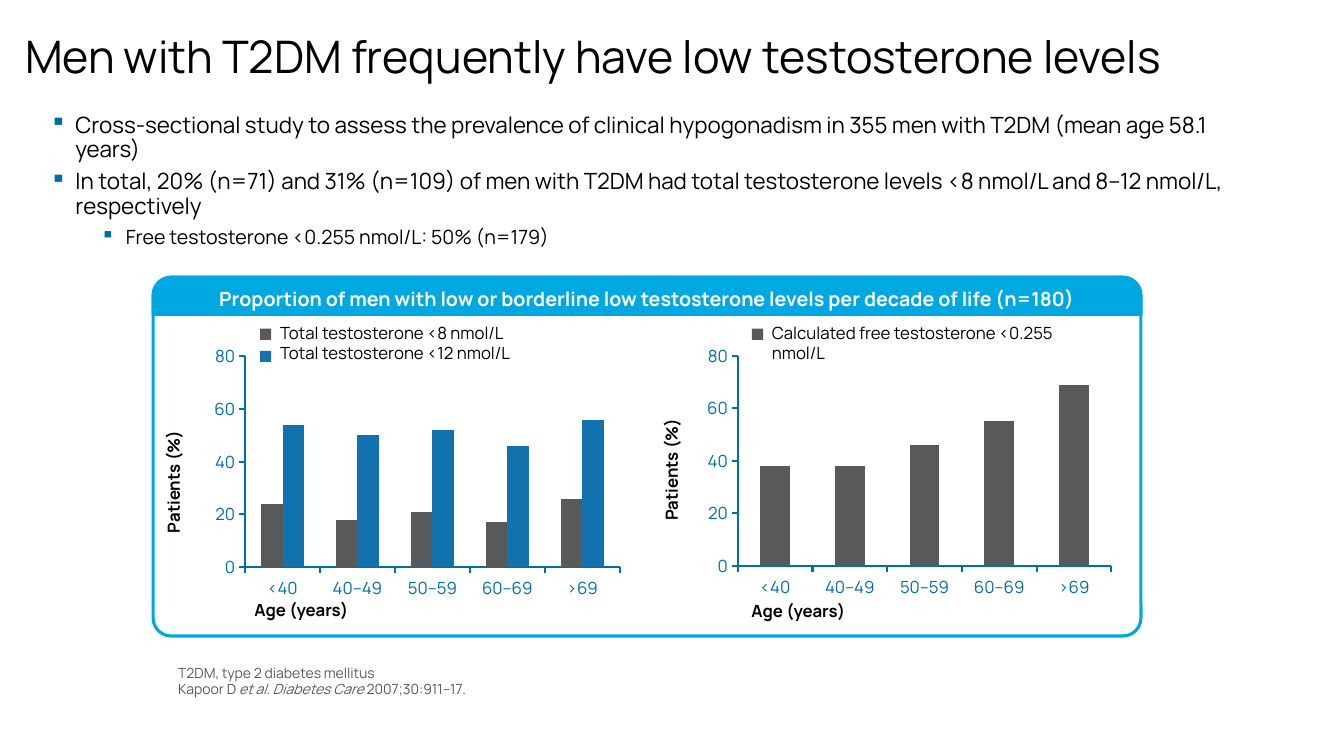
from dataclasses import dataclass

from lxml import etree
from pptx import Presentation
from pptx.chart.data import CategoryChartData as Data
from pptx.dml.color import RGBColor
from pptx.enum.chart import XL_CHART_TYPE as Kind, XL_TICK_MARK as Tick
from pptx.enum.shapes import MSO_SHAPE as Geo
from pptx.enum.text import MSO_ANCHOR as Anchor, PP_ALIGN as Align
from pptx.oxml.ns import qn
from pptx.util import Pt

FONT = "Manrope"
BLACK, WHITE, GREY = "000000", "FFFFFF", "58595B"
BLUE, NAVY, CYAN = "1272AE", "006EAB", "00A8E1"
AGES = ["<40", "40–49", "50–59", "60–69", ">69"]

Box = tuple[float, float, float, float]


@dataclass
class Run:
    text: str
    italic: bool = False
    color: str = ""


@dataclass
class Line:
    runs: list[Run]
    size: float = 0
    left: float = 0
    bullet: bool = False
    before: float = 0


@dataclass
class Bars:
    label: str
    vals: list[int]
    color: str


@dataclass
class Plot:
    box: Box
    area: Box
    bars: list[Bars]
    key: tuple[float, float]
    age: tuple[float, float]
    share: tuple[float, float]


def paint(color: str) -> RGBColor:
    return RGBColor.from_string(color)


def place(box: Box) -> list[Pt]:
    return [Pt(n) for n in box]


def mark(para, left: float) -> None:
    """Give the paragraph a square bullet with a hanging indent."""
    props = para._p.get_or_add_pPr()
    props.set("marL", str(Pt(left)))
    props.set("indent", str(-Pt(18)))
    tint = etree.SubElement(props, qn("a:buClr"))
    etree.SubElement(tint, qn("a:srgbClr"), val=NAVY)
    etree.SubElement(props, qn("a:buChar"), char="▪")


def write(shape, lines: list[Line | str], size: float = 12, color: str = BLACK,
          bold: bool = False, align=Align.LEFT, anchor=Anchor.TOP,
          wrap: bool = True, space: float = 0, turn: bool = False) -> None:
    frame = shape.text_frame
    frame.word_wrap = wrap
    frame.vertical_anchor = anchor
    if turn:
        frame._txBody.bodyPr.set("vert", "vert270")
    for i, item in enumerate(lines):
        line = Line([Run(item)]) if isinstance(item, str) else item
        para = frame.add_paragraph() if i else frame.paragraphs[0]
        if line.bullet:
            mark(para, line.left)
        para.alignment = align
        if space:
            para.line_spacing = space
        if line.before and i:
            para.space_before = Pt(line.before)
        for part in line.runs:
            run = para.add_run()
            run.text = part.text
            font = run.font
            font.name, font.size = FONT, Pt(line.size or size)
            font.bold, font.italic = bold, part.italic
            font.color.rgb = paint(part.color or color)


def label(slide, box: Box, lines: list[Line | str], **style) -> None:
    write(slide.shapes.add_textbox(*place(box)), lines, **style)


def block(slide, geo, box: Box, fill: str = "", edge: str = ""):
    shape = slide.shapes.add_shape(geo, *place(box))
    shape.shadow.inherit = False
    if fill:
        shape.fill.solid()
        shape.fill.fore_color.rgb = paint(fill)
    else:
        shape.fill.background()
    if edge:
        shape.line.color.rgb = paint(edge)
        shape.line.width = Pt(2.25)
    else:
        shape.line.fill.background()
    return shape


def fix(chart, area: Box) -> None:
    """Pin the inner plot area to fractions of the chart."""
    root = chart._chartSpace.chart.plotArea
    for old in root.findall(qn("c:layout")):
        root.remove(old)
    outer = etree.Element(qn("c:layout"))
    root.insert(0, outer)
    inner = etree.SubElement(outer, qn("c:manualLayout"))
    pairs = [("layoutTarget", "inner"), ("xMode", "edge"), ("yMode", "edge")]
    for name, val in pairs + list(zip("xywh", area)):
        etree.SubElement(inner, qn(f"c:{name}"), val=str(val))


def graph(slide, plot: Plot) -> None:
    data = Data()
    data.categories = AGES
    for bars in plot.bars:
        data.add_series(bars.label, bars.vals)
    chart = slide.shapes.add_chart(
        Kind.COLUMN_CLUSTERED, *place(plot.box), data).chart
    chart.has_title = chart.has_legend = False
    chart.font.name, chart.font.size = FONT, Pt(12)
    chart.font.color.rgb = paint(NAVY)
    cols = chart.plots[0]
    cols.gap_width, cols.overlap, cols.vary_by_categories = 150, 0, False
    for bars, series in zip(plot.bars, cols.series):
        series.format.fill.solid()
        series.format.fill.fore_color.rgb = paint(bars.color)
    for axis in (chart.category_axis, chart.value_axis):
        axis.has_major_gridlines = False
        axis.major_tick_mark, axis.minor_tick_mark = Tick.OUTSIDE, Tick.NONE
        axis.format.line.color.rgb = paint(NAVY)
        axis.format.line.width = Pt(1.5)
    scale = chart.value_axis
    scale.minimum_scale, scale.maximum_scale, scale.major_unit = 0, 80, 20
    fix(chart, plot.area)

    x, y = plot.key
    for i, bars in enumerate(plot.bars):
        block(slide, Geo.RECTANGLE, (x, y + 15.8 * i, 8, 8), fill=bars.color)
    label(slide, (x + 7.2, y - 8, 240, 36),
          [bars.label for bars in plot.bars], wrap=False)
    label(slide, (*plot.age, 265, 32), ["Age (years)"], bold=True)
    label(slide, (*plot.share, 32, 107), ["Patients (%)"], bold=True, turn=True)


POINTS = [
    Line([Run("Cross-sectional study to assess the prevalence of clinical "
              "hypogonadism in 355 men with T2DM (mean age 58.1 years)")],
         left=18, bullet=True),
    Line([Run("In total, 20% (n=71) and 31% (n=109) of men with T2DM had total "
              "testosterone levels <8 nmol/L and 8–12 nmol/L, respectively")],
         left=18, bullet=True, before=6),
    Line([Run("Free testosterone <0.255 nmol/L: 50% (n=179)")],
         size=14, left=54, bullet=True, before=6),
]
NOTES = [
    "T2DM, type 2 diabetes mellitus",
    Line([Run("Kapoor D "), Run("et al. Diabetes Care ", italic=True),
          Run("2007;30:911–17"), Run(".", color="005294")]),
]
PLOTS = [
    Plot((139.7, 241.9, 316, 218.2), (0.112, 0.058, 0.847, 0.69),
         [Bars("Total testosterone <8 nmol/L", [24, 18, 21, 17, 26], GREY),
          Bars("Total testosterone <12 nmol/L", [54, 50, 52, 46, 56], BLUE)],
         key=(185.8, 234.8), age=(174.6, 424.5), share=(113, 280.8)),
    Plot((493.2, 217.4, 313.2, 234), (0.108, 0.157, 0.852, 0.641),
         [Bars("Calculated free testosterone <0.255 nmol/L",
               [38, 38, 46, 55, 69], GREY)],
         key=(537.1, 234.8), age=(529.6, 425.2), share=(468.7, 272.2)),
]


def main() -> None:
    deck = Presentation()
    deck.slide_width, deck.slide_height = Pt(960), Pt(540)
    slide = deck.slides.add_slide(deck.slide_layouts[6])
    label(slide, (10.8, 9.4, 913, 65.5),
          ["Men with T2DM frequently have low testosterone levels"],
          size=32, anchor=Anchor.MIDDLE, space=0.9)
    label(slide, (28.8, 77.8, 877, 133.2), POINTS, size=16, space=0.9)
    label(slide, (120.2, 470.2, 720, 31.7), NOTES, size=10, color=GREY,
          anchor=Anchor.BOTTOM)
    for plot in PLOTS:
        graph(slide, plot)
    panel = block(slide, Geo.ROUNDED_RECTANGLE, (109.4, 198, 705.6, 256.3),
                  edge=CYAN)
    panel.adjustments[0] = 0.05
    head = block(slide, Geo.ROUND_2_SAME_RECTANGLE, (109.4, 198, 705.6, 26.6),
                 fill=CYAN, edge=CYAN)
    head.adjustments[0] = 0.5
    write(head, ["Proportion of men with low or borderline low testosterone "
                 "levels per decade of life (n=180)"],
          size=14, color=WHITE, bold=True, align=Align.CENTER,
          anchor=Anchor.MIDDLE)
    deck.save("out.pptx")


if __name__ == "__main__":
    main()
